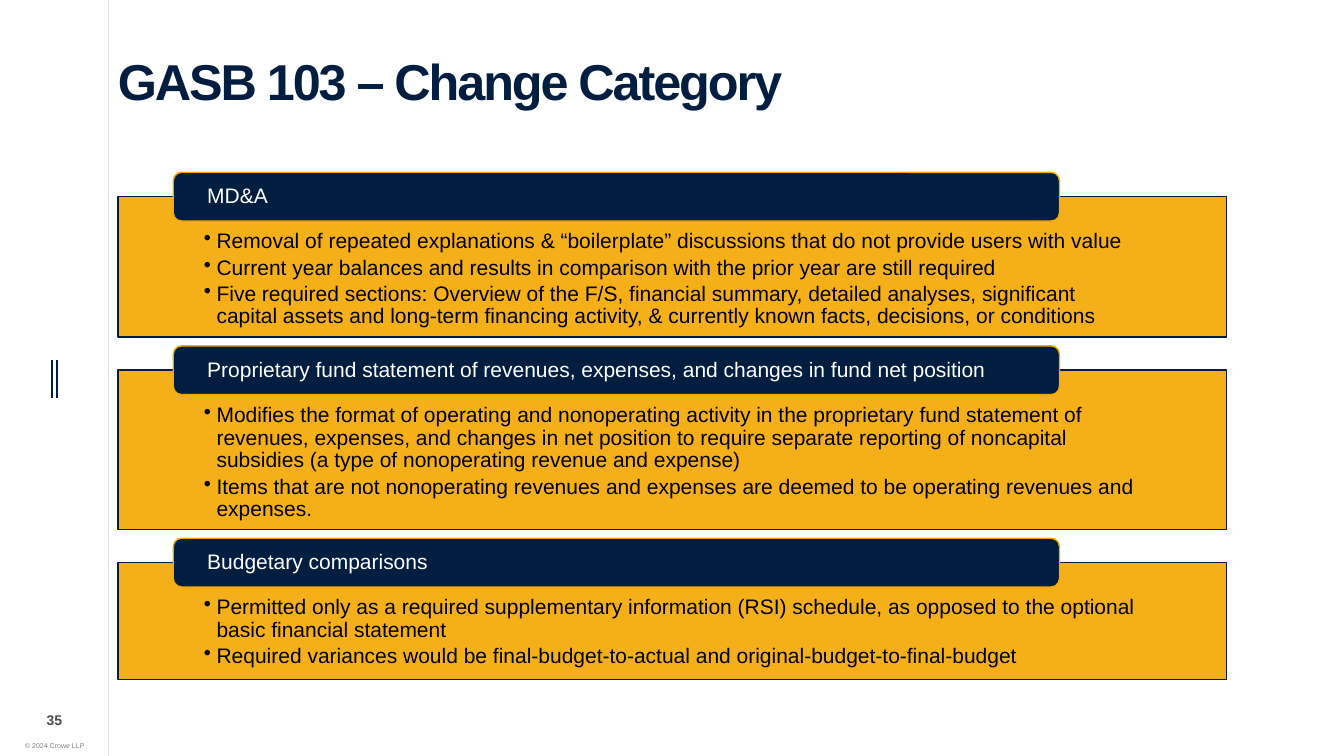
from lxml import etree
from pptx import Presentation
from pptx import util as u
from pptx.dml import color
from pptx.enum import shapes, text
from pptx.oxml import ns

Pt = u.Pt
Shape = shapes.MSO_SHAPE
Anchor = text.MSO_ANCHOR
Align = text.PP_ALIGN


class Deck:
    hues = {"navy": "011E41", "gold": "F5A800", "black": "000000",
            "white": "FFFFFF", "gray": "808080"}
    font = "Arial"

    def __init__(self, wide, high):
        self.prs = Presentation()
        self.prs.slide_width, self.prs.slide_height = Pt(wide), Pt(high)
        self.slide = self.prs.slides.add_slide(self.prs.slide_layouts[5])

    def paint(self, fill, hue, alpha=100):
        fill.solid()
        fill.fore_color.rgb = color.RGBColor.from_string(self.hues[hue])
        if alpha < 100:
            tint = fill._xPr.find(ns.qn("a:solidFill"))[0]
            etree.SubElement(tint, ns.qn("a:alpha"), val=str(alpha * 1000))

    def letter(self, shape, lines, size, hue, inset=(0, 0, 0, 0), anchor=Anchor.TOP,
               align=Align.LEFT, bold=False, alpha=100, space=1.0, after=0,
               bullet=False, track=0, wrap=True):
        frame = shape.text_frame
        frame.text = "\n".join(lines)
        frame.auto_size = text.MSO_AUTO_SIZE.NONE
        frame.word_wrap = wrap
        frame.vertical_anchor = anchor
        (frame.margin_left, frame.margin_top,
         frame.margin_right, frame.margin_bottom) = map(Pt, inset)
        for para in frame.paragraphs:
            if bullet:
                props = para._p.get_or_add_pPr()
                props.set("marL", str(Pt(9)))
                props.set("indent", str(-Pt(9)))
                etree.SubElement(props, ns.qn("a:buChar"), char="•")
            para.alignment = align
            para.line_spacing = space
            para.space_after = Pt(after)
            for run in para.runs:
                run.font.name = self.font
                run.font.size = Pt(size)
                run.font.bold = bold
                self.paint(run.font.fill, hue, alpha)
                if track:
                    run._r.get_or_add_rPr().set("spc", str(track))

    def title(self, words, x, y, w, h):
        head = self.slide.shapes.title
        head.left, head.top, head.width, head.height = map(Pt, (x, y, w, h))
        self.letter(head, [words], 36, "navy", (0, 15, 0, 0), bold=True,
                    space=0.8, track=-150)

    def label(self, words, x, y, w, h, size, hue, **style):
        box = self.slide.shapes.add_textbox(*map(Pt, (x, y, w, h)))
        self.letter(box, [words], size, hue, align=Align.CENTER, **style)

    def rule(self, x, top, end, width, hue, alpha=100):
        line = self.slide.shapes.add_connector(
            shapes.MSO_CONNECTOR.STRAIGHT, Pt(x), Pt(top), Pt(x), Pt(end))
        line.line.width = Pt(width)
        self.paint(line.line.fill, hue, alpha)
        etree.SubElement(line._element.spPr, ns.qn("a:effectLst"))

    def block(self, kind, x, y, w, h, fill, edge, alpha=100):
        shape = self.slide.shapes.add_shape(kind, *map(Pt, (x, y, w, h)))
        shape.shadow.inherit = False
        self.paint(shape.fill, fill, alpha)
        self.paint(shape.line.fill, edge)
        shape.line.width = Pt(1)
        return shape

    def panel(self, y, h, items):
        shape = self.block(Shape.RECTANGLE, 84.2, y, 792, h, "gold", "navy", 90)
        self.letter(shape, items, 15, "black", (61.5, 24.5, 61.5, 8.5),
                    space=0.9, after=2.4, bullet=True)

    def tab(self, y, words):
        shape = self.block(Shape.ROUNDED_RECTANGLE, 123.8, y, 633, 34.8, "navy", "gold")
        shape.adjustments[0] = 0.17
        self.letter(shape, [words], 15, "white", (22.5, 1.7, 22.5, 1.7),
                    Anchor.MIDDLE, space=0.9)


topics = [
    ("MD&A", 100.4, [
        "Removal of repeated explanations & “boilerplate” discussions that do not provide users with value",
        "Current year balances and results in comparison with the prior year are still required",
        "Five required sections: Overview of the F/S, financial summary, detailed analyses, significant "
        "capital assets and long-term financing activity, & currently known facts, decisions, or conditions",
    ]),
    ("Proprietary fund statement of revenues, expenses, and changes in fund net position", 113.8, [
        "Modifies the format of operating and nonoperating activity in the proprietary fund statement of "
        "revenues, expenses, and changes in net position to require separate reporting of noncapital "
        "subsidies (a type of nonoperating revenue and expense)",
        "Items that are not nonoperating revenues and expenses are deemed to be operating revenues and expenses.",
    ]),
    ("Budgetary comparisons", 83.5, [
        "Permitted only as a required supplementary information (RSI) schedule, as opposed to the optional "
        "basic financial statement",
        "Required variances would be final-budget-to-actual and original-budget-to-final-budget",
    ]),
]


def main():
    deck = Deck(960, 540)
    for x in (36.9, 40.6):
        deck.rule(x, 257, 284.4, 1.5, "navy")
    deck.rule(77.6, 0, 540, 0.5, "black", 20)
    deck.label("© 2024 Crowe LLP", 10, 526.4, 58.4, 13.6, 5, "gray",
               inset=(7.2, 3.6, 7.2, 3.6), wrap=False)
    deck.title("GASB 103 – Change Category", 84.2, 28.8, 792, 108)
    top, gap = 140.4, 23.6
    for name, high, items in topics:
        deck.panel(top, high, items)
        deck.tab(top - 17.3, name)
        top += high + gap
    deck.label("35", 18.7, 505.4, 40.3, 18, 10, "black",
               anchor=Anchor.MIDDLE, bold=True, alpha=70)
    deck.prs.save("out.pptx")


if __name__ == "__main__":
    main()
